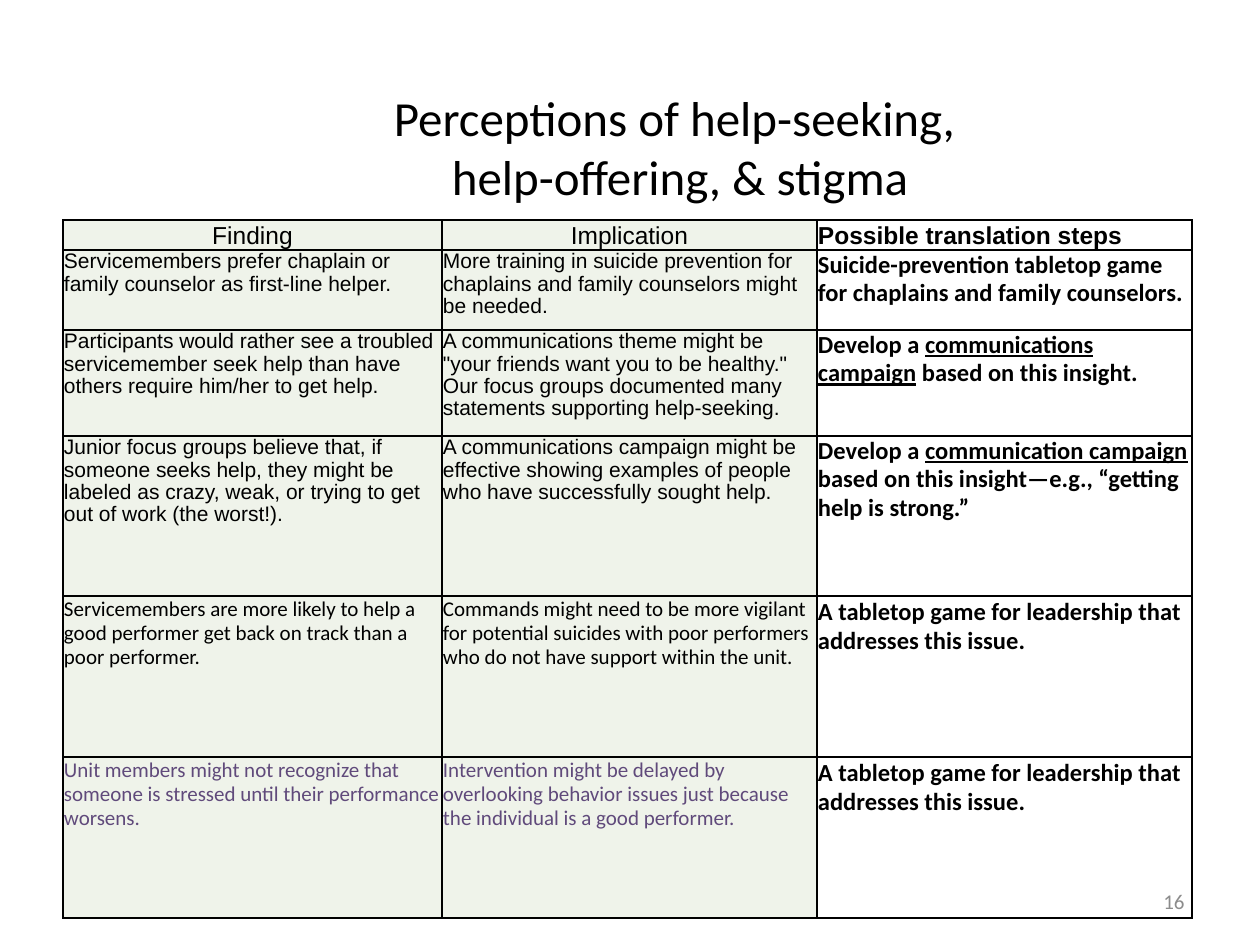
from dataclasses import dataclass

from lxml import etree
from pptx import Presentation
from pptx.dml.color import RGBColor
from pptx.enum import text as t
from pptx.oxml import ns
from pptx.util import Pt

PX = 914400 // 126
BLACK = RGBColor(0, 0, 0)
PURPLE = RGBColor(0x60, 0x4A, 0x7B)
GREY = RGBColor(0x8C, 0x8C, 0x8C)
PALE = RGBColor(0xEF, 0xF3, 0xEA)
LEFT, MID, RIGHT = t.PP_ALIGN.LEFT, t.PP_ALIGN.CENTER, t.PP_ALIGN.RIGHT
TOP, CENTRE, BASE = t.MSO_ANCHOR.TOP, t.MSO_ANCHOR.MIDDLE, t.MSO_ANCHOR.BOTTOM


@dataclass
class Row:
    high: int
    finding: str
    meaning: str
    step: tuple[str, ...]  # every second part is underlined
    font: str = "Arial"
    color: RGBColor = BLACK
    gap: float | None = 0.95


GAME = ("A tabletop game for leadership that addresses this issue.",)
COLS = (379, 375, 375)
HEAD = ("Finding", "Implication", "Possible translation steps")
HEAD_HIGH = 30
ROWS = (
    Row(80, "Servicemembers prefer chaplain or family counselor as first-line helper.",
        "More training in suicide prevention for chaplains and family counselors "
        "might be needed.",
        ("Suicide-prevention tabletop game for chaplains and family counselors.",)),
    Row(106, "Participants would rather see a troubled servicemember seek help than "
        "have others require him/her to get help.",
        'A communications theme might be "your friends want you to be healthy." '
        "Our focus groups documented many statements supporting help-seeking.",
        ("Develop a ", "communications campaign", " based on this insight.")),
    Row(160, "Junior focus groups believe that, if someone seeks help, they might be "
        "labeled as crazy, weak, or trying to get out of work (the worst!).",
        "A communications campaign might be effective showing examples of people "
        "who have successfully sought help.",
        ("Develop a ", "communication campaign ",
         "based on this insight—e.g., “getting help is strong.”")),
    Row(161, "Servicemembers are more likely to help a good performer get back on "
        "track than a poor performer.",
        "Commands might need to be more vigilant for potential suicides with poor "
        "performers who do not have support within the unit.",
        GAME, font="Calibri", gap=None),
    Row(161, "Unit members might not recognize that someone is stressed until their "
        "performance worsens.",
        "Intervention might be delayed by overlooking behavior issues just because "
        "the individual is a good performer.",
        GAME, font="Calibri", color=PURPLE, gap=None),
)


def write(frame, *parts: str, size: int, font="Calibri", color=BLACK, bold=False,
          align=LEFT, gap: float | None = None) -> None:
    """Fill the first paragraph; every second part is underlined."""
    frame.word_wrap = True
    para = frame.paragraphs[0]
    para.alignment = align
    if gap:
        para.line_spacing = gap
    for i, part in enumerate(parts):
        for j, line in enumerate(part.split("\n")):
            if j:
                para.add_line_break()
            run = para.add_run()
            run.text = line
            face = run.font
            face.name, face.size, face.bold = font, Pt(size), bold
            face.color.rgb = color
            if i % 2:
                face.underline = True


def label(slide, box: tuple[int, ...], words: str, **style) -> None:
    frame = slide.shapes.add_textbox(*(n * PX for n in box)).text_frame
    frame.vertical_anchor = CENTRE
    write(frame, words, **style)


def border(cell) -> None:
    props = cell._tc.get_or_add_tcPr()
    for i, side in enumerate(("lnL", "lnR", "lnT", "lnB")):
        line = etree.Element(ns.qn(f"a:{side}"), w=str(Pt(1)))
        fill = etree.SubElement(line, ns.qn("a:solidFill"))
        etree.SubElement(fill, ns.qn("a:srgbClr"), val=str(BLACK))
        props.insert(i, line)


def fill(cell, col: int, *parts: str, anchor=TOP, **style) -> None:
    cell.margin_left = cell.margin_right = cell.margin_top = PX
    cell.margin_bottom = 0
    cell.vertical_anchor = anchor
    if col < 2:
        cell.fill.solid()
        cell.fill.fore_color.rgb = PALE
    else:
        cell.fill.background()
    border(cell)
    write(cell.text_frame, *parts, **style)


def grid(slide) -> None:
    highs = (HEAD_HIGH, *(row.high for row in ROWS))
    table = slide.shapes.add_table(len(highs), len(COLS), 63 * PX, 220 * PX,
                                   sum(COLS) * PX, sum(highs) * PX).table
    table.first_row = table.horz_banding = False
    for col, wide in zip(table.columns, COLS):
        col.width = wide * PX
    for line, high in zip(table.rows, highs):
        line.height = high * PX
    for c, name in enumerate(HEAD):
        fill(table.cell(0, c), c, name, anchor=BASE, size=14, font="Arial",
             bold=c == 2, align=LEFT if c == 2 else MID, gap=0.95)
    for r, row in enumerate(ROWS, 1):
        for c, words in enumerate((row.finding, row.meaning)):
            fill(table.cell(r, c), c, words, size=12, font=row.font,
                 color=row.color, gap=0.95)
        fill(table.cell(r, 2), 2, *row.step, size=14, bold=True, gap=row.gap)


def main() -> None:
    deck = Presentation()
    deck.slide_width, deck.slide_height = 1260 * PX, 945 * PX
    slide = deck.slides.add_slide(deck.slide_layouts[6])
    label(slide, (113, 67, 1134, 158),
          "Perceptions of help-seeking, \nhelp-offering, & stigma", size=28, align=MID)
    label(slide, (903, 876, 294, 50), "16", size=12, color=GREY, align=RIGHT)
    grid(slide)
    deck.save("out.pptx")


if __name__ == "__main__":
    main()
